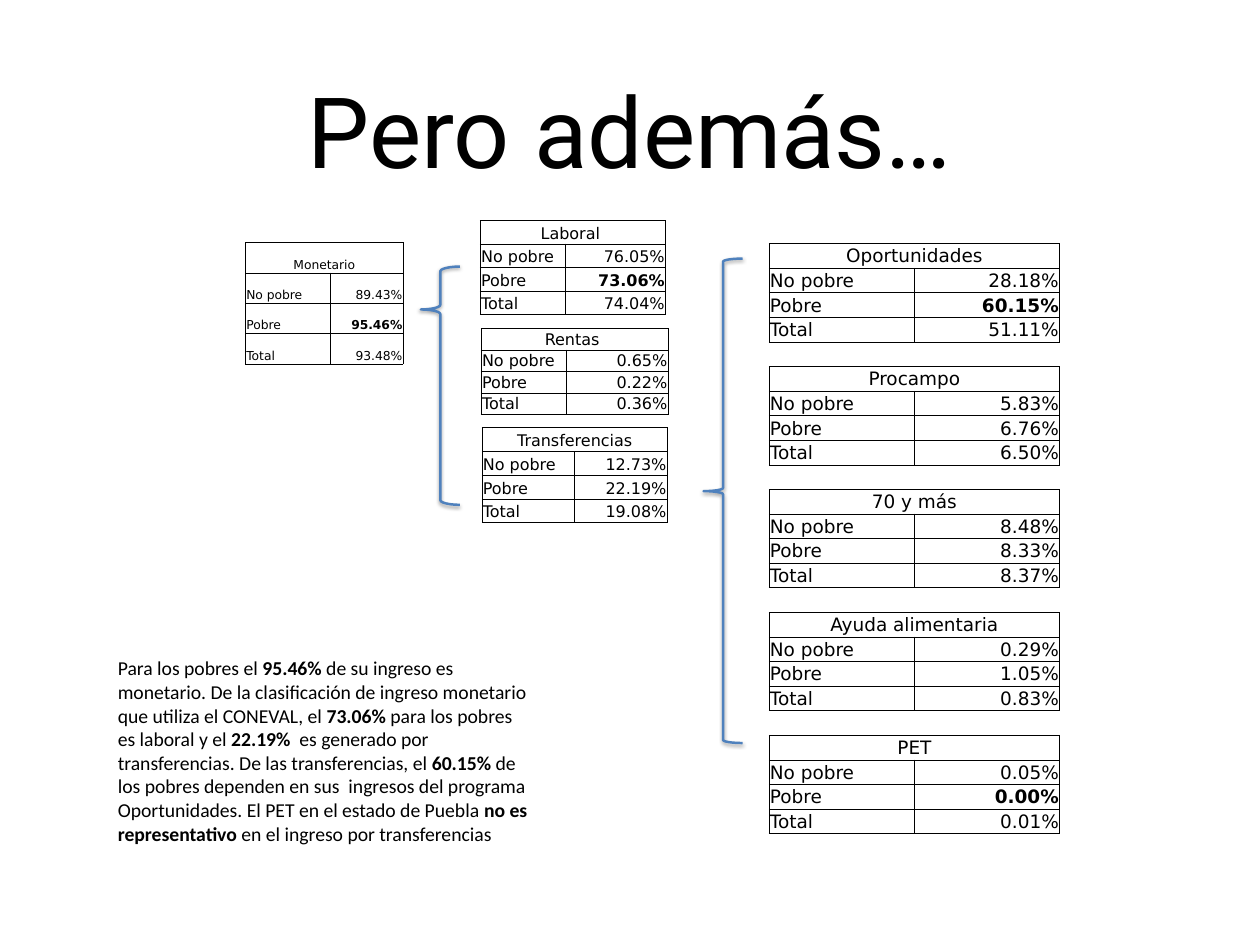
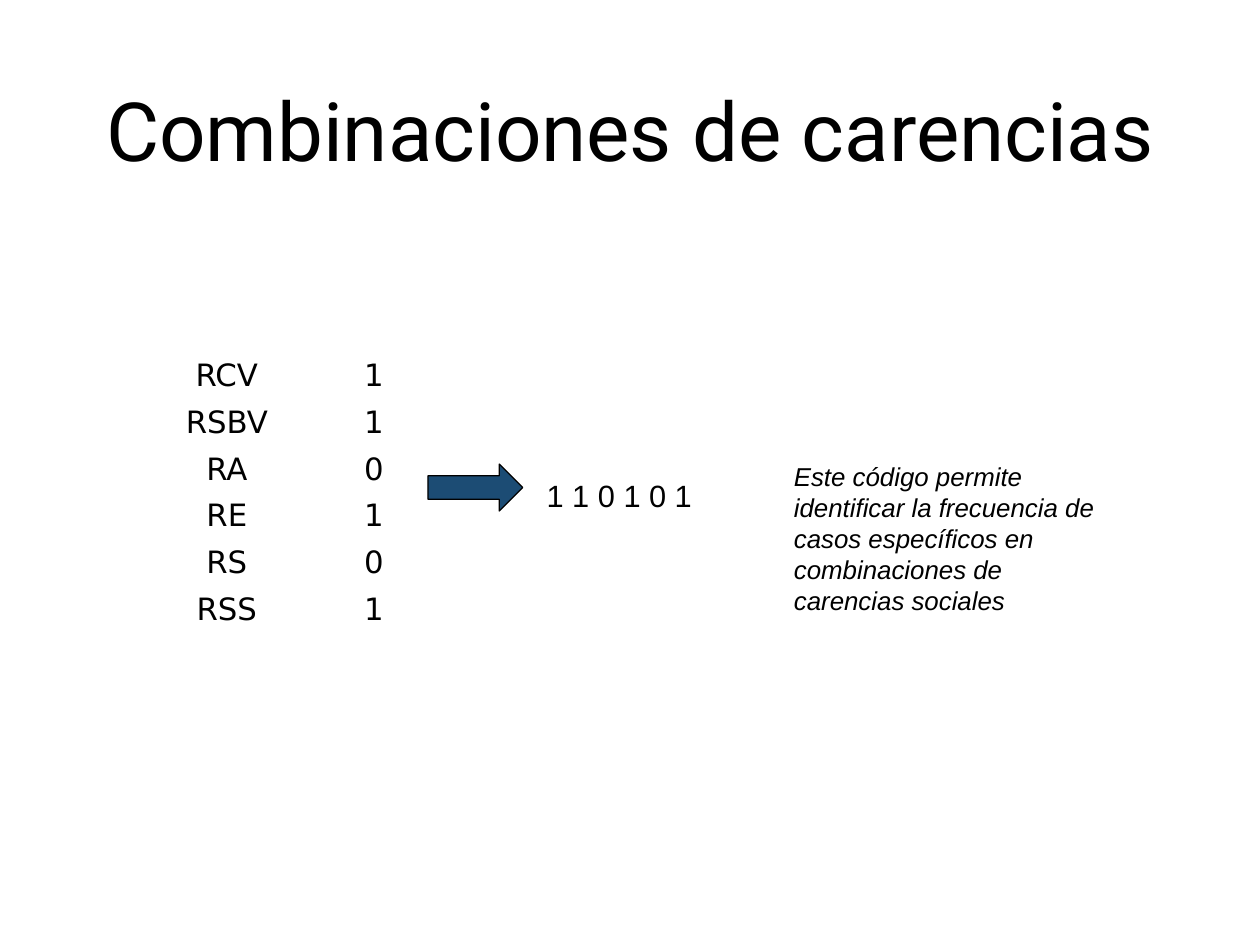
from lxml import etree
from pptx import Presentation
from pptx.dml.color import RGBColor
from pptx.enum.shapes import MSO_SHAPE
from pptx.enum.text import MSO_ANCHOR, PP_ALIGN
from pptx.oxml.ns import qn
from pptx.util import Pt

SCALE = 9144
LEFT, CENTER, RIGHT = PP_ALIGN.LEFT, PP_ALIGN.CENTER, PP_ALIGN.RIGHT
TOP, MIDDLE, BOTTOM = MSO_ANCHOR.TOP, MSO_ANCHOR.MIDDLE, MSO_ANCHOR.BOTTOM
BRACE, ARROW = MSO_SHAPE.LEFT_BRACE, MSO_SHAPE.RIGHT_ARROW
COLORS = {"ink": "000000", "brace": "4F81BD", "arrow": "1C4C74"}
FONTS = {"title": "Roboto", "body": "Calibri", "table": "DejaVu Sans", "note": "Arial"}
PLAIN_TABLE = "{2D5ABB26-0587-4C30-8999-92F81FD0307C}"


def px(*lengths):
    return [round(length * SCALE) for length in lengths]


def color(name):
    return RGBColor.from_string(COLORS[name])


class Deck:
    """Holds the shared style and the current slide."""

    def __init__(self, width, height):
        self.deck = Presentation()
        self.deck.slide_width, self.deck.slide_height = px(width, height)
        self.page = None

    def add_page(self, title, size):
        self.page = self.deck.slides.add_slide(self.deck.slide_layouts[6])
        self.text((104, 28, 1214, 236), [(title, False)], "title", size,
                  align=CENTER, anchor=MIDDLE, inset=6)

    def add_spans(self, para, spans, font, size, align=LEFT, italic=False):
        para.alignment = align
        for words, bold in spans:
            span = para.add_run()
            span.text = words
            span.font.name = FONTS[font]
            span.font.size = Pt(size)
            span.font.bold = bold
            span.font.italic = italic
            span.font.color.rgb = color("ink")

    def text(self, place, spans, font, size, align=LEFT, anchor=TOP, inset=5, italic=False):
        frame = self.page.shapes.add_textbox(*px(*place)).text_frame
        frame.word_wrap = True
        frame.vertical_anchor = anchor
        (frame.margin_left, frame.margin_top,
         frame.margin_right, frame.margin_bottom) = px(*[inset] * 4)
        self.add_spans(frame.paragraphs[0], spans, font, size, align, italic)

    def border(self, cell, sides):
        properties = cell._tc.get_or_add_tcPr()
        for side in sides:
            line = etree.SubElement(properties, qn(f"a:ln{side}"), w=str(Pt(0.5)))
            fill = etree.SubElement(line, qn("a:solidFill"))
            etree.SubElement(fill, qn("a:srgbClr"), val=COLORS["ink"])

    def table(self, place, first_column, rows, size, aligns=(LEFT, RIGHT), grid=True):
        frame = self.page.shapes.add_table(len(rows), 2, *px(*place))
        table = frame.table
        table.first_row = table.horz_banding = False
        next(frame._element.iter(qn("a:tableStyleId"))).text = PLAIN_TABLE
        widths = px(first_column, place[2] - first_column)
        for column, width in zip(table.columns, widths):
            column.width = width
        for row, spans in enumerate(rows):
            table.rows[row].height = px(place[3] / len(rows))[0]
            cells = [table.cell(row, column) for column in range(2)]
            for cell in cells:
                (cell.margin_left, cell.margin_top,
                 cell.margin_right, cell.margin_bottom) = px(1, 1, 1, 1)
                cell.vertical_anchor = BOTTOM
                if grid:
                    self.border(cell, "LRTB" if spans else "TB")
                cell.fill.background()
            if len(spans) == 1:
                cells[0].merge(cells[1])
            for cell, span, align in zip(cells, spans, aligns):
                para = cell.text_frame.paragraphs[0]
                self.add_spans(para, [span], "table", size, CENTER if len(spans) == 1 else align)
            for cell in cells[len(spans):]:
                para = cell.text_frame.paragraphs[0]
                etree.SubElement(para._p, qn("a:endParaRPr"), sz=str(size * 100))

    def shape(self, kind, place, adjustments, line, width, fill=None):
        shape = self.page.shapes.add_shape(kind, *px(*place))
        shape.shadow.inherit = False
        for index, value in enumerate(adjustments):
            shape.adjustments[index] = value
        shape.line.color.rgb = color(line)
        shape.line.width = Pt(width)
        if fill:
            shape.fill.solid()
            shape.fill.fore_color.rgb = color(fill)
        else:
            shape.fill.background()
        return shape

    def brace(self, place, curve, tip):
        shape = self.shape(BRACE, place, (curve, tip), "brace", 2)
        effects = shape._element.spPr.find(qn("a:effectLst"))
        shadow = etree.SubElement(effects, qn("a:outerShdw"), blurRad=str(Pt(3)),
                                  dist=str(Pt(1.6)), dir="5400000", rotWithShape="0")
        tint = etree.SubElement(shadow, qn("a:srgbClr"), val=COLORS["ink"])
        etree.SubElement(tint, qn("a:alpha"), val="38000")


def income_rows(name, not_poor, poor, total, strong=False):
    return [[(name, False)],
            [("No pobre", False), (not_poor, False)],
            [("Pobre", False), (poor, strong)],
            [("Total", False), (total, False)]]


INCOME_TABLES = [
    ((277, 274, 178, 137), 96, 10, ("Monetario", "89.43%", "95.46%", "93.48%", True)),
    ((542, 249, 209, 106), 96, 13, ("Laboral ", "76.05%", "73.06%", "74.04%", True)),
    ((543, 371, 211, 97), 96, 13, ("Rentas ", "0.65%", "0.22%", "0.36%")),
    ((544, 483, 209, 107), 104, 13, ("Transferencias", "12.73%", "22.19%", "19.08%")),
]
PROGRAMS = [
    ("Oportunidades", "28.18%", "60.15%", "51.11%", True),
    ("Procampo", "5.83%", "6.76%", "6.50%"),
    ("70 y más", "8.48%", "8.33%", "8.37%"),
    ("Ayuda alimentaria", "0.29%", "1.05%", "0.83%"),
    ("PET", "0.05%", "0.00%", "0.01%", True),
]
SUMMARY = [
    ("Para los pobres el ", False),
    ("95.46%", True),
    (" de su ingreso es monetario. De la clasificación de ingreso monetario "
     "que utiliza el CONEVAL, el ", False),
    ("73.06%", True),
    (" para los pobres es laboral y el ", False),
    ("22.19%", True),
    ("  es generado por transferencias. De las transferencias, el ", False),
    ("60.15%", True),
    (" de los pobres dependen en sus  ingresos del programa Oportunidades. "
     "El PET en el estado de Puebla ", False),
    ("no es representativo", True),
    (" en el ingreso por transferencias", False),
]
LACKS = {"RCV": "1", "RSBV": "1", "RA": "0", "RE": "1", "RS": "0", "RSS": "1"}
CODE_NOTE = ("Este código permite identificar la frecuencia de casos específicos "
             "en combinaciones de carencias sociales")


def income_page(deck):
    deck.add_page("Pero además…", 80)
    deck.text((128, 736, 476, 274), SUMMARY, "body", 16)
    for place, first_column, size, values in INCOME_TABLES:
        deck.table(place, first_column, income_rows(*values), size)
    rows = []
    for program in PROGRAMS:
        rows += ([[]] if rows else []) + income_rows(*program)
    deck.table((868, 275, 328, 667), 164, rows, 15)
    deck.brace((794, 292, 44, 547), 0.08, 0.48)
    deck.brace((475, 301, 44, 269), 0.12, 0.18)


def code_page(deck):
    deck.add_page("Combinaciones de carencias", 66.4)
    rows = [[(lack, False), (flag, False)] for lack, flag in LACKS.items()]
    deck.table((173, 393, 332, 317), 166, rows, 25, (CENTER, CENTER), grid=False)
    deck.text((612, 533, 213, 49), [(" ".join(LACKS.values()), False)], "note", 25)
    deck.shape(ARROW, (483, 524, 107, 53), (0.5, 0.5), "ink", 1, "arrow")
    deck.text((891, 515, 356, 176), [(CODE_NOTE, False)], "note", 21, italic=True)


def main():
    deck = Deck(1422, 1067)
    income_page(deck)
    code_page(deck)
    deck.deck.save("out.pptx")


if __name__ == "__main__":
    main()
